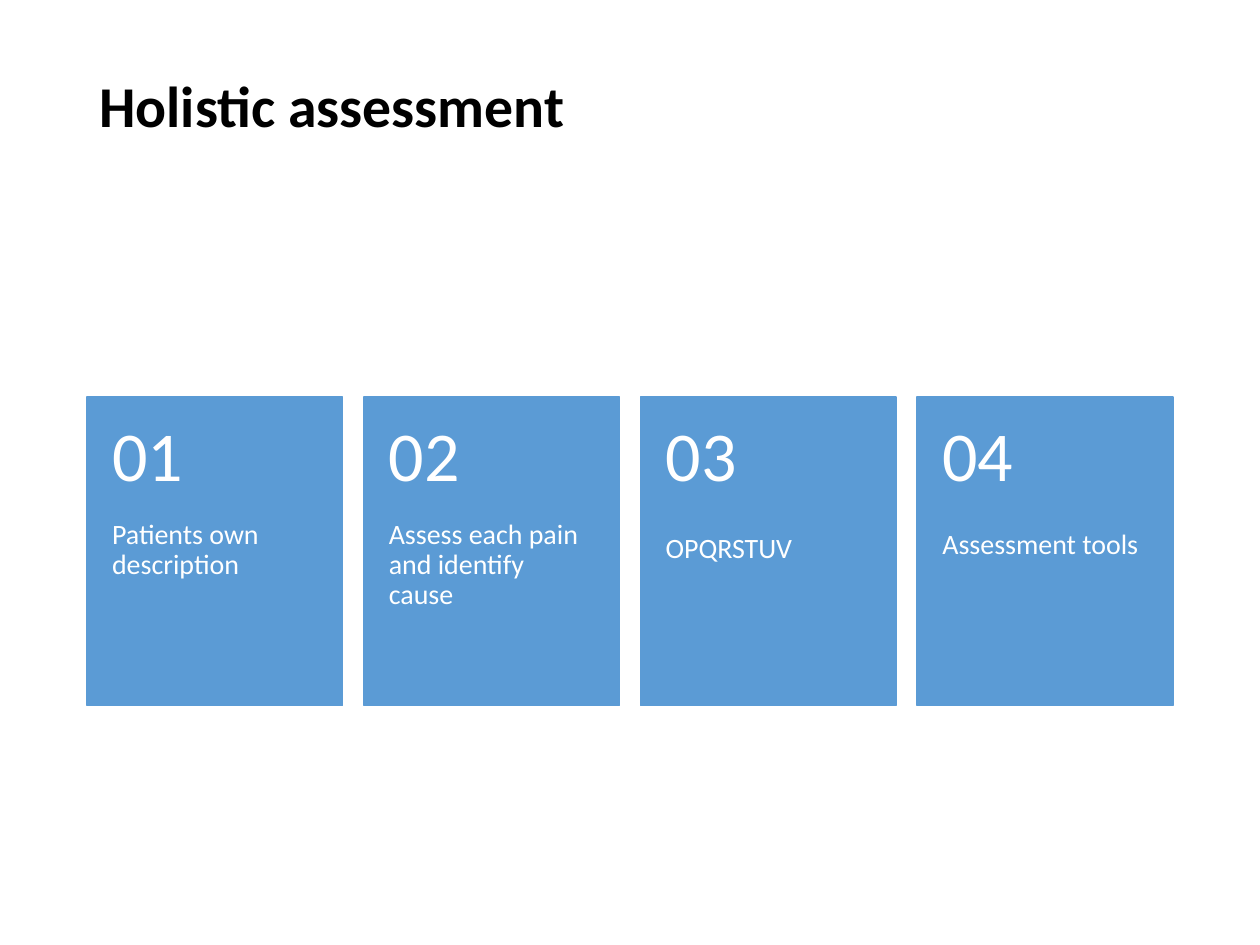
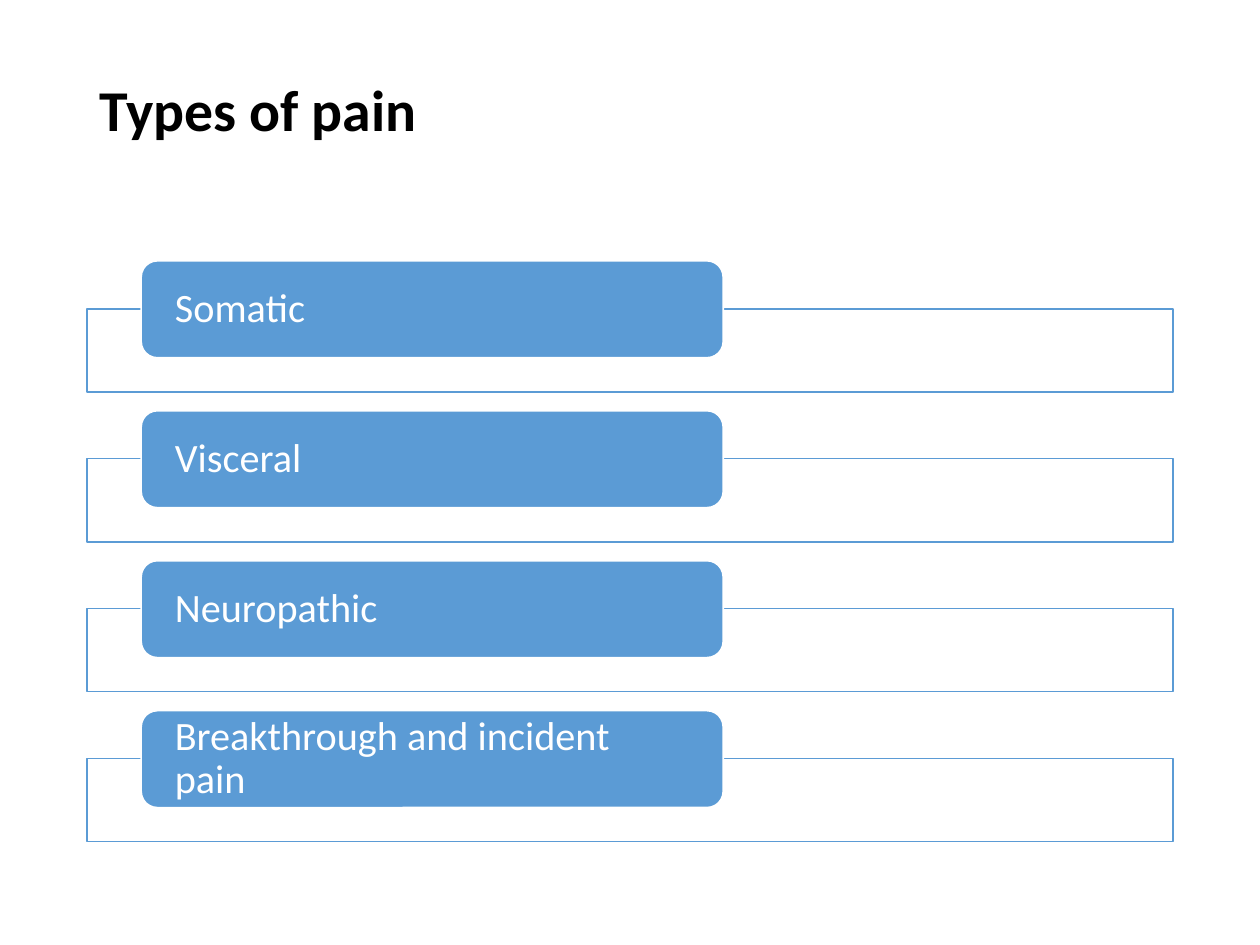
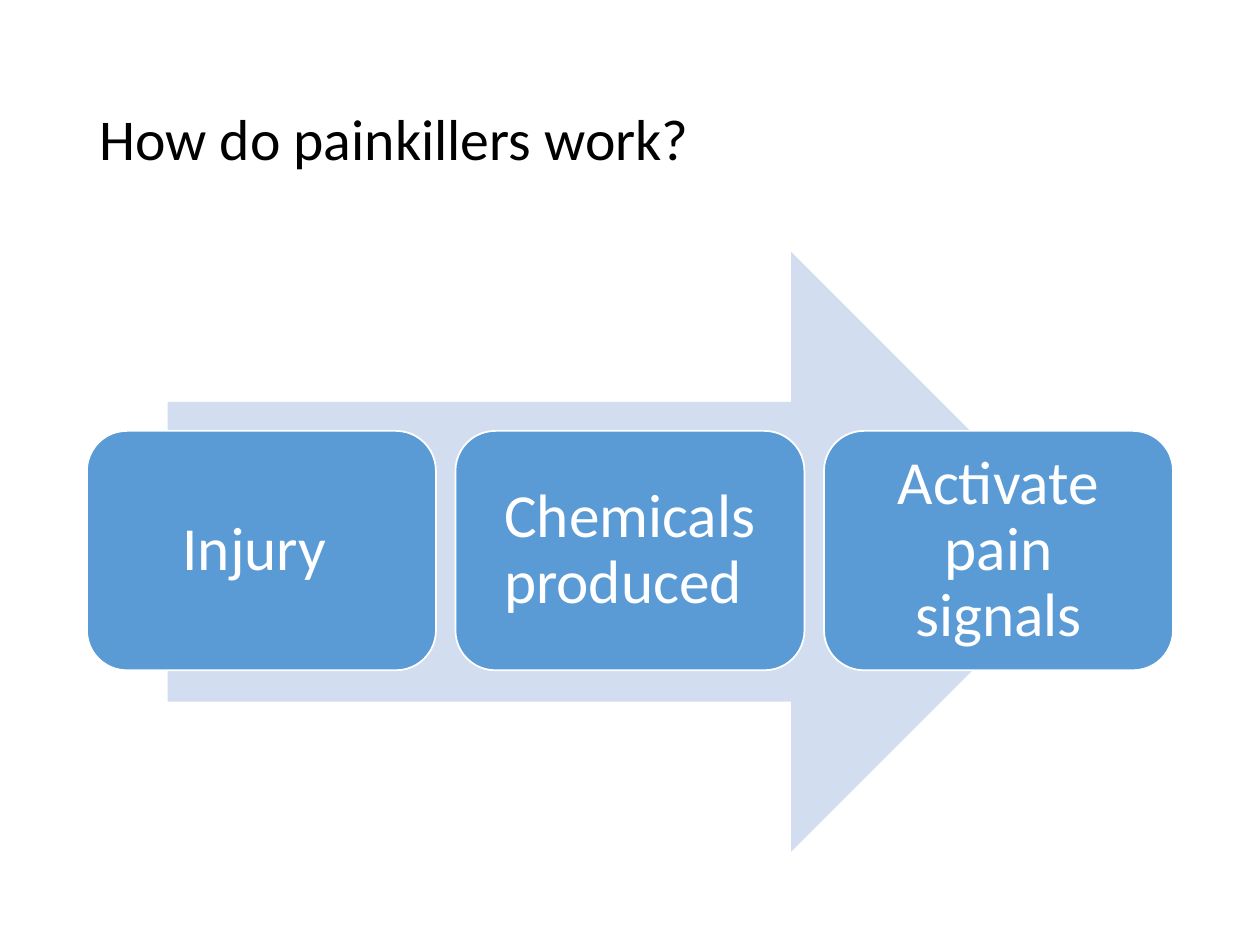
from pptx import Presentation
from pptx.dml.color import RGBColor
from pptx.enum.shapes import MSO_SHAPE as SHAPE
from pptx.enum.text import MSO_ANCHOR as ANCHOR, PP_ALIGN as ALIGN
from pptx.util import Inches, Pt

BLUE = RGBColor(0x5B, 0x9B, 0xD5)
PALE_BLUE = RGBColor(0xD2, 0xDE, 0xEF)
WHITE = RGBColor(0xFF, 0xFF, 0xFF)
BLACK = RGBColor(0x00, 0x00, 0x00)
FONT = "Calibri"

# Shared column of content
LEFT, WIDTH = 0.69, 8.62


def write(holder, text, size, color=WHITE, bold=False, align=ALIGN.LEFT,
          anchor=ANCHOR.MIDDLE, insets=(0.1, 0.05, 0.1, 0.05)):
    frame = holder.text_frame
    frame.word_wrap = True
    frame.vertical_anchor = anchor
    (frame.margin_left, frame.margin_top,
     frame.margin_right, frame.margin_bottom) = map(Inches, insets)
    frame.text = text
    paragraph = frame.paragraphs[0]
    paragraph.alignment = align
    paragraph.line_spacing = 0.9
    font = paragraph.runs[0].font
    font.name, font.size, font.bold = FONT, Pt(size), bold
    font.color.rgb = color


def add_block(slide, kind, left, top, width, height, fill, line=None):
    block = slide.shapes.add_shape(
        kind, Inches(left), Inches(top), Inches(width), Inches(height))
    block.shadow.inherit = False
    block.fill.solid()
    block.fill.fore_color.rgb = fill
    if line is None:
        block.line.fill.background()
    else:
        block.line.color.rgb = line
        block.line.width = Pt(1)
    return block


prs = Presentation()
prs.slide_width, prs.slide_height = Inches(10), Inches(7.5)

# Slides with their titles
titles = [
    ("Holistic assessment", 0.49, 0.75, True),
    ("Types of pain", 0.4, 0.99, True),
    ("How do painkillers work?", 0.4, 1.45, False),
]
slides = []
for text, top, height, bold in titles:
    slide = prs.slides.add_slide(prs.slide_layouts[6])
    title = slide.shapes.add_textbox(
        Inches(LEFT), Inches(top), Inches(WIDTH), Inches(height))
    write(title, text, 33, BLACK, bold)
    slides.append(slide)
assessment, pain_types, painkillers = slides

# Holistic assessment: numbered cards, each with the drop of its description
steps = [
    ("Patients own description", 0),
    ("Assess each pain and identify cause", 0),
    ("OPQRSTUV", 0.34),
    ("Assessment tools", 0.28),
]
card_top, card_width, card_height, number_height = 3.15, 2.03, 2.45, 0.98
card_pitch = (WIDTH - card_width) / (len(steps) - 1)
for i, (step, drop) in enumerate(steps):
    left = LEFT + i * card_pitch
    add_block(assessment, SHAPE.RECTANGLE, left, card_top,
              card_width, card_height, BLUE, BLUE)
    description = assessment.shapes.add_textbox(
        Inches(left), Inches(card_top + number_height),
        Inches(card_width), Inches(card_height - number_height))
    write(description, step, 16, anchor=ANCHOR.TOP,
          insets=(0.2, drop, 0.2, 0.36))
    number = assessment.shapes.add_textbox(
        Inches(left), Inches(card_top),
        Inches(card_width), Inches(number_height))
    write(number, f"{i + 1:02}", 40, insets=(0.2, 0.18, 0.2, 0.18))

# Types of pain: a label overlapping the top edge of each frame
pains = ["Somatic", "Visceral", "Neuropathic", "Breakthrough and incident pain"]
for i, pain in enumerate(pains):
    top = 2.07 + i * 1.19
    add_block(pain_types, SHAPE.RECTANGLE, LEFT, top + 0.38, WIDTH, 0.66,
              WHITE, BLUE)
    label = add_block(pain_types, SHAPE.ROUNDED_RECTANGLE, 1.12, top,
                      4.62, 0.77, BLUE, WHITE)
    write(label, pain, 23, insets=(0.23, 0, 0.23, 0))

# How painkillers work: stages in front of an arrow
add_block(painkillers, SHAPE.RIGHT_ARROW, 1.33, 2, 7.33, 4.76, PALE_BLUE)
stages = ["Injury ", "Chemicals produced ", "Activate pain signals"]
stage_width = 2.77
stage_pitch = (WIDTH - stage_width) / (len(stages) - 1)
for i, stage in enumerate(stages):
    box = add_block(painkillers, SHAPE.ROUNDED_RECTANGLE,
                    LEFT + i * stage_pitch, 3.42, stage_width, 1.9,
                    BLUE, WHITE)
    write(box, stage, 35, align=ALIGN.CENTER, insets=(0.15,) * 4)

prs.save("out.pptx")
